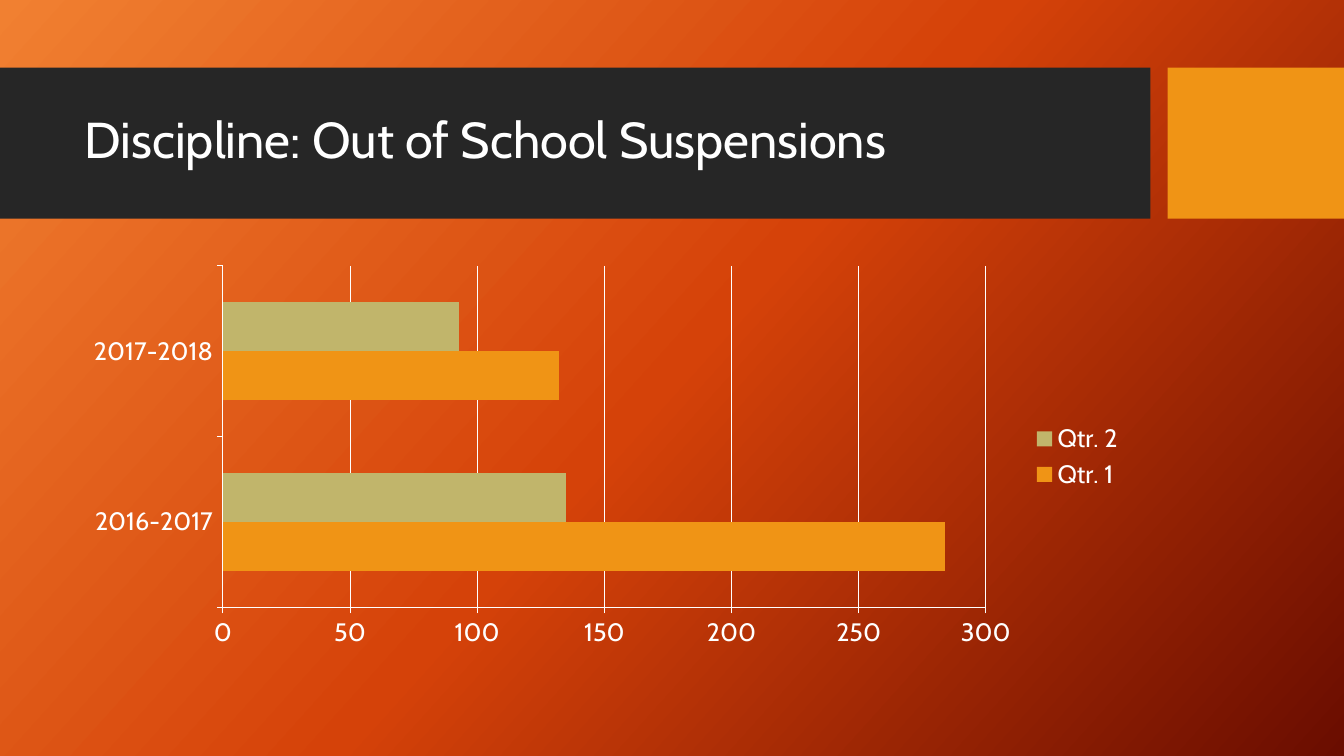
import copy
import pptx
import pptx.chart.data
import pptx.dml.color
import pptx.enum.chart
import pptx.enum.shapes
import pptx.enum.text
import pptx.oxml
import pptx.oxml.ns
import pptx.util

Inches = pptx.util.Inches


class Theme:
    font = "Cabin"
    white = "FFFFFF"
    dark = "262626"
    gold = "F09415"
    sand = "C1B56B"
    glow = [(0, "F18031"), (0.5, "D54209"), (1, "6A0D00")]
    angle = 42
    title = 36
    label = 18
    line = 0.75


def color(code):
    return pptx.dml.color.RGBColor.from_string(code)


class Page:
    def __init__(self, slide, theme):
        self.slide = slide
        self.theme = theme

    def style(self, font, size):
        font.name = self.theme.font
        font.size = pptx.util.Pt(size)
        font.color.rgb = color(self.theme.white)

    def backdrop(self):
        fill = self.slide.background.fill
        fill.gradient()
        fill.gradient_angle = 360 - self.theme.angle
        # A new gradient has two stops; add the third
        stops = next(self.slide.element.iter(pptx.oxml.ns.qn("a:gsLst")))
        stops.append(copy.deepcopy(stops[-1]))
        for stop, (place, code) in zip(fill.gradient_stops, self.theme.glow):
            stop.position = place
            stop.color.rgb = color(code)

    def block(self, left, top, width, height, code):
        shape = self.slide.shapes.add_shape(
            pptx.enum.shapes.MSO_SHAPE.RECTANGLE,
            Inches(left), Inches(top), Inches(width), Inches(height))
        shape.shadow.inherit = False
        shape.fill.solid()
        shape.fill.fore_color.rgb = color(code)
        shape.line.fill.background()

    def title(self, left, top, width, height, text):
        box = self.slide.shapes.add_textbox(
            Inches(left), Inches(top), Inches(width), Inches(height))
        frame = box.text_frame
        frame.word_wrap = True
        frame.vertical_anchor = pptx.enum.text.MSO_ANCHOR.MIDDLE
        para = frame.paragraphs[0]
        para.text = text
        para.line_spacing = 0.9
        self.style(para.font, self.theme.title)

    def rule(self, line):
        line.color.rgb = color(self.theme.white)
        line.width = pptx.util.Pt(self.theme.line)

    def bars(self, left, top, width, height, years, series, inner):
        data = pptx.chart.data.CategoryChartData()
        data.categories = years
        for name, values, _ in series:
            data.add_series(name, values)
        chart = self.slide.shapes.add_chart(
            pptx.enum.chart.XL_CHART_TYPE.BAR_CLUSTERED,
            Inches(left), Inches(top), Inches(width), Inches(height),
            data).chart
        self.style(chart.font, self.theme.label)
        chart.has_title = False

        # Bars
        plot = chart.plots[0]
        plot.vary_by_categories = False
        plot.gap_width = 150
        for bar, (_, _, code) in zip(plot.series, series):
            bar.format.fill.solid()
            bar.format.fill.fore_color.rgb = color(code)

        # Axes and grid
        for axis in (chart.category_axis, chart.value_axis):
            axis.major_tick_mark = pptx.enum.chart.XL_TICK_MARK.OUTSIDE
            axis.minor_tick_mark = pptx.enum.chart.XL_TICK_MARK.NONE
            self.rule(axis.format.line)
        scale = chart.value_axis
        scale.minimum_scale, scale.maximum_scale = 0, 300
        scale.major_unit = 50
        scale.has_major_gridlines = True
        self.rule(scale.major_gridlines.format.line)

        # Legend
        chart.has_legend = True
        chart.legend.position = pptx.enum.chart.XL_LEGEND_POSITION.RIGHT
        chart.legend.include_in_layout = False
        self.style(chart.legend.font, self.theme.label)

        # Inner plot area as shares of the chart frame
        area = chart.element.chart.plotArea
        for old in area.findall(pptx.oxml.ns.qn("c:layout")):
            area.remove(old)
        sizes = "".join(f'<c:{tag} val="{share}"/>'
                        for tag, share in zip("xywh", inner))
        area.insert(0, pptx.oxml.parse_xml(
            f'<c:layout {pptx.oxml.ns.nsdecls("c")}><c:manualLayout>'
            '<c:layoutTarget val="inner"/>'
            '<c:xMode val="edge"/><c:yMode val="edge"/>'
            f'{sizes}</c:manualLayout></c:layout>'))


def main():
    deck = pptx.Presentation()
    deck.slide_width = Inches(13.33)
    deck.slide_height = Inches(7.5)
    theme = Theme()
    page = Page(deck.slides.add_slide(deck.slide_layouts[6]), theme)

    # Background and title band
    page.backdrop()
    page.block(0, 0.67, 11.41, 1.5, theme.dark)
    page.block(11.58, 0.67, 1.75, 1.5, theme.gold)
    page.title(0.74, 0.82, 10.51, 1.18,
               "Discipline: Out of School Suspensions")

    # Suspensions by year and quarter
    page.bars(0.74, 2.56, 10.51, 3.94, ["2016-2017", "2017-2018"],
              [("Qtr. 1", (284, 132), theme.gold),
               ("Qtr. 2", (135, 93), theme.sand)],
              (0.14, 0.02, 0.72, 0.86))

    deck.save("out.pptx")


if __name__ == "__main__":
    main()
